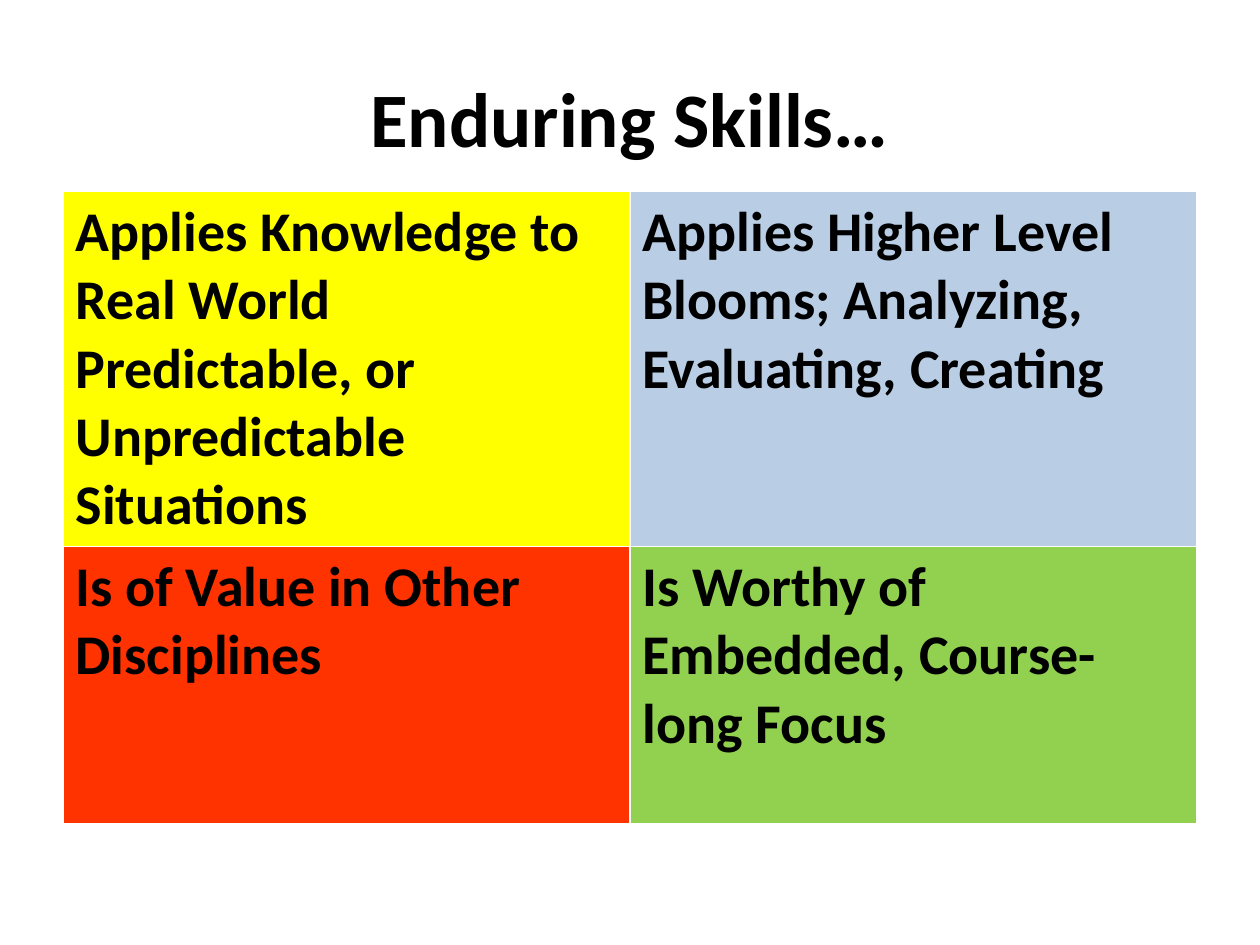
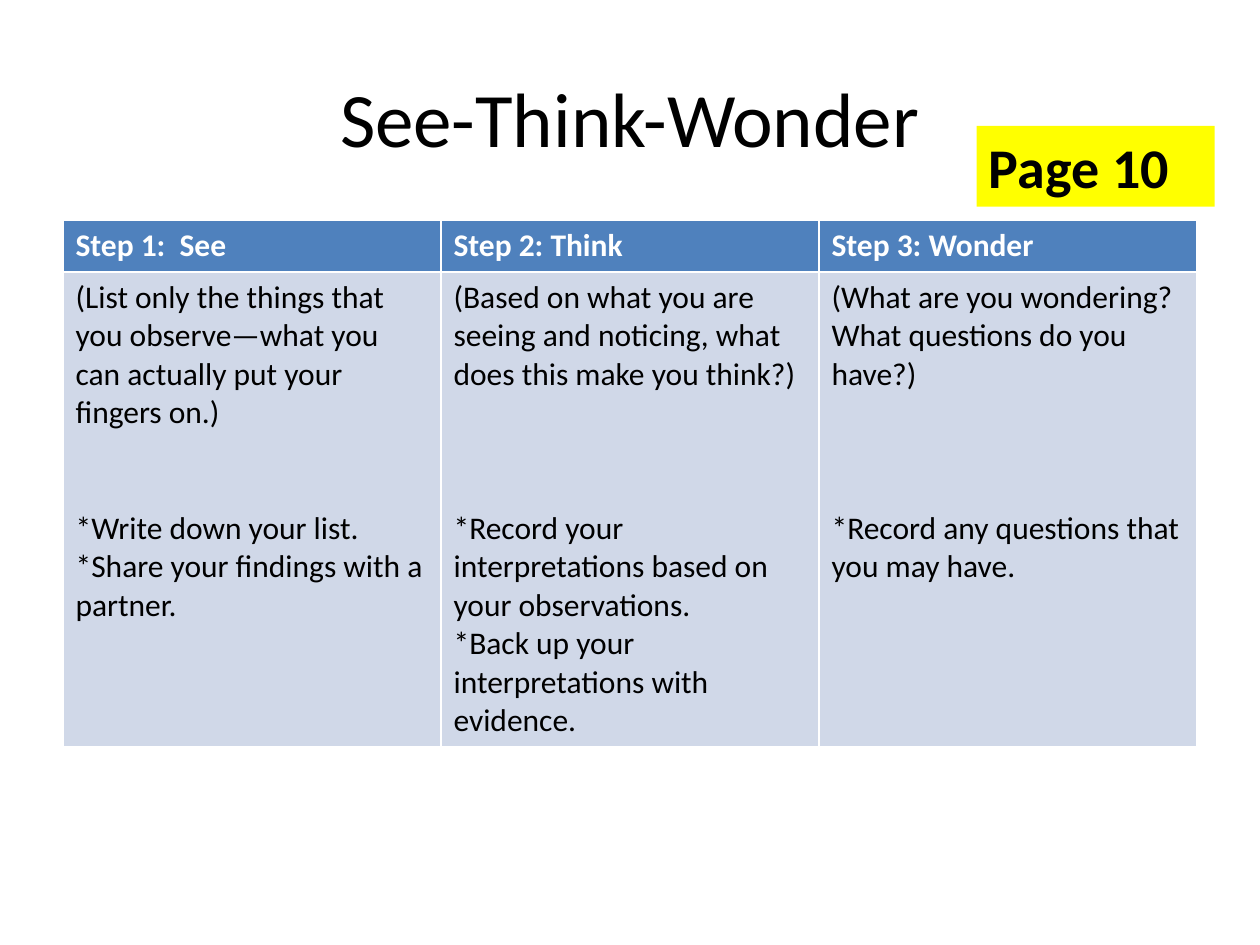
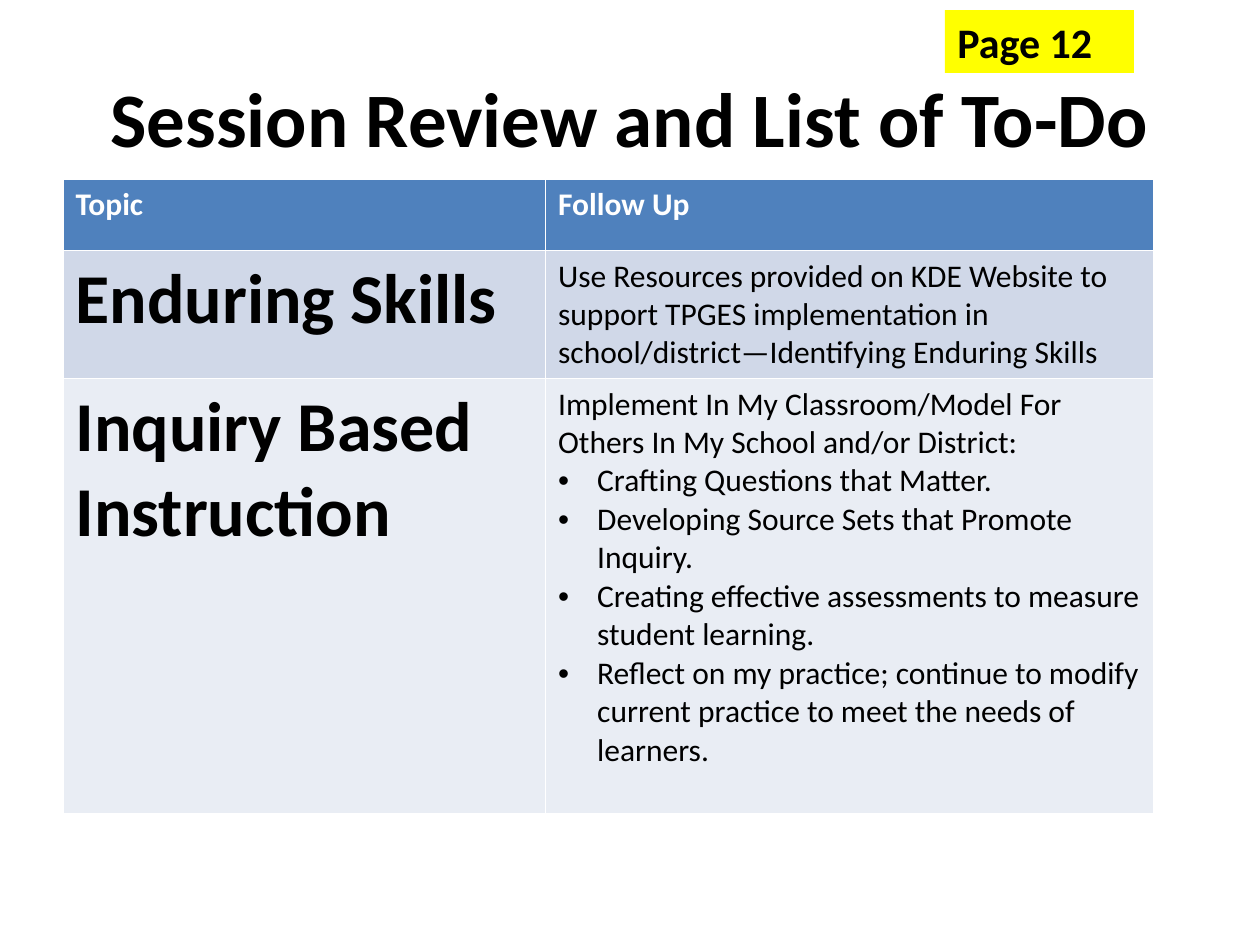
from dataclasses import dataclass

from lxml.etree import SubElement
from pptx import Presentation
from pptx.dml.color import RGBColor as RGB
from pptx.enum.shapes import MSO_SHAPE as SHAPE
from pptx.enum.text import MSO_ANCHOR as ANCHOR, MSO_AUTO_SIZE as AUTO, PP_ALIGN as ALIGN
from pptx.oxml.ns import qn
from pptx.util import Inches, Pt


@dataclass(frozen=True)
class Theme:
    """Colours and type sizes of the deck."""

    font: str = "Calibri"
    black: str = "000000"
    white: str = "FFFFFF"
    yellow: str = "FFFF00"
    pale_blue: str = "B9CDE5"
    red: str = "FF3300"
    green: str = "92D050"
    header: str = "4F81BD"
    bands: tuple = ("D0D8E8", "E9EDF4")
    title: int = 44
    topic: int = 40
    large: int = 32
    medium: int = 24
    body: int = 18
    line: int = 22


T = Theme()


@dataclass(frozen=True)
class Para:
    """A paragraph with the lines left free above it and its bullet."""

    text: str
    skip: int = 0
    bullet: bool = False


@dataclass(frozen=True)
class Cell:
    """A table cell's paragraphs and look."""

    paras: tuple
    fill: str
    size: int = T.body
    bold: bool = False
    color: str = T.black


def text_cell(text, fill, **look):
    """Return a cell that holds a single paragraph."""
    return Cell((Para(text),), fill, **look)


def header_row(*labels):
    """Return a row of bold white labels on the header colour."""
    return [text_cell(s, T.header, bold=True, color=T.white) for s in labels]


def add_run(p, text, size, bold=False, color=T.black):
    """Add a formatted run to a paragraph."""
    r = p.add_run()
    r.text = text
    for name, value in {"name": T.font, "size": Pt(size), "bold": bold}.items():
        setattr(r.font, name, value)
    r.font.color.rgb = RGB.from_string(color)


def set_bullet(p):
    """Give a paragraph a round bullet and a hanging indent."""
    pPr = p._p.get_or_add_pPr()
    for name, inches in {"marL": 0.31, "indent": -0.31}.items():
        pPr.set(name, str(Inches(inches)))
    SubElement(pPr, qn("a:buFont")).set("typeface", "Arial")
    SubElement(pPr, qn("a:buChar")).set("char", "•")


def fill_cell(cell, content):
    """Write the paragraphs and fill of one table cell."""
    cell.fill.solid()
    cell.fill.fore_color.rgb = RGB.from_string(content.fill)
    tf = cell.text_frame
    for i, para in enumerate(content.paras):
        p = tf.add_paragraph() if i else tf.paragraphs[0]
        if para.skip:
            p.space_before = Pt(para.skip * T.line)
        if para.bullet:
            set_bullet(p)
        add_run(p, para.text, content.size, content.bold, content.color)


def add_grid(s, left, top, widths, heights, rows):
    """Add a table whose size follows from its columns and rows."""
    box = [Inches(v) for v in (left, top, sum(widths), sum(heights))]
    table = s.shapes.add_table(len(heights), len(widths), *box).table
    for col, width in zip(table.columns, widths):
        col.width = Inches(width)
    for row, height, contents in zip(table.rows, heights, rows):
        row.height = Inches(height)
        for cell, content in zip(row.cells, contents):
            fill_cell(cell, content)


def add_page_tag(s, left, top, width, height, text, size):
    """Add a yellow box with a page reference."""
    sp = s.shapes.add_shape(SHAPE.RECTANGLE, *map(Inches, (left, top, width, height)))
    sp.shadow.inherit = False
    sp.fill.solid()
    sp.fill.fore_color.rgb = RGB.from_string(T.yellow)
    sp.line.fill.background()
    tf = sp.text_frame
    frame = {"word_wrap": True, "auto_size": AUTO.SHAPE_TO_FIT_TEXT,
             "vertical_anchor": ANCHOR.TOP}
    for name, value in frame.items():
        setattr(tf, name, value)
    p = tf.paragraphs[0]
    p.alignment = ALIGN.LEFT
    add_run(p, text, size, bold=True)


def add_titled_slide(prs, title, bold=True):
    """Add a slide with a centred title."""
    s = prs.slides.add_slide(prs.slide_layouts[5])
    sp = s.shapes.title
    for name, inches in {"left": 0.5, "top": 0.3, "width": 9, "height": 1.25}.items():
        setattr(sp, name, Inches(inches))
    tf = sp.text_frame
    tf.vertical_anchor = ANCHOR.MIDDLE
    p = tf.paragraphs[0]
    p.alignment = ALIGN.CENTER
    add_run(p, title, T.title, bold)
    return s


def skills_slide(prs):
    """Build the four-colour grid of enduring skills."""
    s = add_titled_slide(prs, "Enduring Skills…")
    look = {"size": T.large, "bold": True}
    rows = [
        [text_cell("Applies Knowledge to Real World Predictable, or Unpredictable Situations",
                   T.yellow, **look),
         text_cell("Applies Higher Level Blooms; Analyzing, Evaluating, Creating",
                   T.pale_blue, **look)],
        [text_cell("Is of Value in Other Disciplines", T.red, **look),
         text_cell("Is Worthy of Embedded, Course-long Focus", T.green, **look)],
    ]
    add_grid(s, 0.5, 1.52, [4.5] * 2, [2.81, 2.2], rows)


def steps_slide(prs):
    """Build the three-step routine."""
    s = add_titled_slide(prs, "See-Think-Wonder", bold=False)
    steps = [
        (Para("(List only the things that you observe—what you can actually put your "
              "fingers on.)"),
         Para("*Write down your list.", skip=2),
         Para("*Share your findings with a partner.")),
        (Para("(Based on what you are seeing and noticing, what does this make you think?)"),
         Para("*Record your interpretations based on your observations.", skip=3),
         Para("*Back up your interpretations with evidence.")),
        (Para("(What are you wondering?  What questions do you have?)"),
         Para("*Record any questions that you may have.", skip=3)),
    ]
    rows = [header_row("Step 1:  See", "Step 2: Think", "Step 3: Wonder"),
            [Cell(paras, T.bands[0]) for paras in steps]]
    add_grid(s, 0.5, 1.75, [3] * 3, [0.41, 3.75], rows)
    add_page_tag(s, 7.75, 1, 1.89, 0.64, "Page 10", T.large)


def review_slide(prs):
    """Build the review table of topics and follow-ups."""
    s = add_titled_slide(prs, "Session Review and List of To-Do")
    tasks = ("Crafting Questions that Matter.",
             "Developing Source Sets that Promote Inquiry.",
             "Creating effective assessments to measure student learning.",
             "Reflect on my practice; continue to modify current practice to meet the "
             "needs of learners.")
    inquiry = (Para("Implement In My Classroom/Model For Others In My School and/or District:"),
               *(Para(task, bullet=True) for task in tasks))
    skills = (Para("Use Resources provided on KDE Website to support TPGES implementation in "
                   "school/district—Identifying Enduring Skills"),)
    topics = [("Enduring Skills", skills), ("Inquiry Based Instruction", inquiry)]
    rows = [header_row("Topic", "Follow Up")]
    for (topic, paras), band in zip(topics, T.bands):
        rows.append([text_cell(topic, band, size=T.topic, bold=True), Cell(paras, band)])
    add_grid(s, 0.5, 1.42, [3.83, 4.83], [0.57, 1.01, 3.45], rows)
    add_page_tag(s, 7.5, 0.08, 1.5, 0.5, "Page 12", T.medium)


def main():
    """Build the deck and save it."""
    prs = Presentation()
    prs.slide_width, prs.slide_height = Inches(10), Inches(7.5)
    for build in (skills_slide, steps_slide, review_slide):
        build(prs)
    prs.save("out.pptx")


if __name__ == "__main__":
    main()
